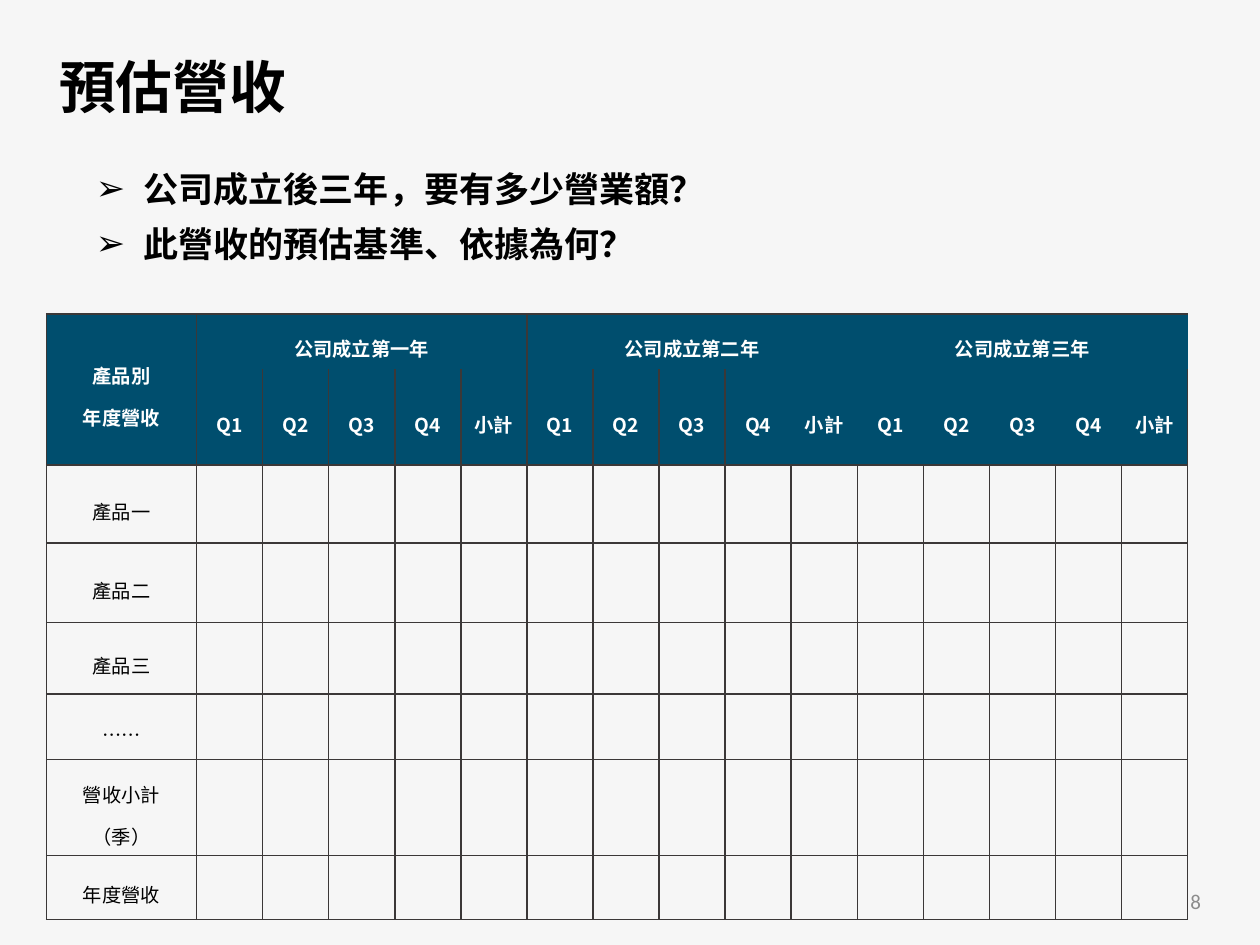
from lxml import etree
from pptx import Presentation
from pptx.dml.color import RGBColor
from pptx.enum.text import MSO_ANCHOR, MSO_AUTO_SIZE, PP_ALIGN
from pptx.oxml.ns import qn
from pptx.util import Inches, Pt

MIDDLE = MSO_ANCHOR.MIDDLE
CENTER, LEFT, RIGHT = PP_ALIGN.CENTER, PP_ALIGN.LEFT, PP_ALIGN.RIGHT
GROW = MSO_AUTO_SIZE.SHAPE_TO_FIT_TEXT
BLACK = RGBColor(0x00, 0x00, 0x00)
WHITE = RGBColor(0xFF, 0xFF, 0xFF)
GRAY = RGBColor(0x8C, 0x8C, 0x8C)
PAPER = RGBColor(0xF6, 0xF6, 0xF6)
TEAL = RGBColor(0x00, 0x4E, 0x6E)
GRID = RGBColor(0x3B, 0x38, 0x38)
CJK = "Noto Sans CJK SC"


def add_text(paragraph, text, size, color, bold, align, spacing, font=CJK):
    paragraph.alignment = align
    paragraph.line_spacing = spacing
    paragraph.space_before = Pt(0)
    run = paragraph.add_run()
    run.text = text
    run.font.size = Pt(size)
    run.font.bold = bold
    run.font.name = font
    run.font.color.rgb = color
    east_asian = etree.SubElement(run.font._element, qn("a:ea"))
    east_asian.set("typeface", font)


def set_borders(cell, visible):
    """Draw the sides marked True in visible (left, right, top, bottom)."""
    properties = cell._tc.get_or_add_tcPr()
    for index, (side, shown) in enumerate(zip("LRTB", visible)):
        line = etree.Element(qn(f"a:ln{side}"), w=str(Pt(1)))
        if shown:
            fill = etree.SubElement(line, qn("a:solidFill"))
            etree.SubElement(fill, qn("a:srgbClr"), val=str(GRID))
        else:
            etree.SubElement(line, qn("a:noFill"))
        properties.insert(index, line)


prs = Presentation()
prs.slide_width, prs.slide_height = Inches(10), Inches(7.5)
slide = prs.slides.add_slide(prs.slide_layouts[1])
slide.background.fill.solid()
slide.background.fill.fore_color.rgb = PAPER

# Title
title = slide.shapes.title
title.left, title.top = Inches(0.37), Inches(0.22)
title.width, title.height = Inches(9.25), Inches(0.81)
title.text_frame.vertical_anchor = MIDDLE
add_text(title.text_frame.paragraphs[0], "預估營收", 32.4, BLACK, True, LEFT, 1.2)

# Page number
page_number = slide.shapes.add_textbox(
    Inches(7.38), Inches(6.95), Inches(2.25), Inches(0.4))
page_number.text_frame.word_wrap = True
page_number.text_frame.vertical_anchor = MIDDLE
add_text(page_number.text_frame.paragraphs[0], "8", 12, GRAY, False, RIGHT, 1.0,
         "Calibri")

# Revenue table
YEARS = ["公司成立第一年", "公司成立第二年", "公司成立第三年"]
PERIODS = ["Q1", "Q2", "Q3", "Q4", "小計"]
PRODUCTS = ["產品一", "產品二", "產品三", "……", "營收小計（季）", "年度營收"]
ROW_HEIGHTS = [0.44, 0.76, 0.62, 0.63, 0.57, 0.52, 0.76, 0.51]
TABLE_WIDTH, LABEL_WIDTH = 9.06, 1.19
column_count = 1 + len(YEARS) * len(PERIODS)

frame = slide.shapes.add_table(
    len(ROW_HEIGHTS), column_count, Inches(0.37), Inches(2.49),
    Inches(TABLE_WIDTH), Inches(sum(ROW_HEIGHTS)))
table = frame.table
table.first_row = table.horz_banding = False
for row, height in zip(table.rows, ROW_HEIGHTS):
    row.height = Inches(height)
for index, column in enumerate(table.columns):
    period_width = (TABLE_WIDTH - LABEL_WIDTH) / (column_count - 1)
    column.width = Inches(period_width if index else LABEL_WIDTH)

labels = {(0, 0): ["產品別", "年度營收"]}
for y, year in enumerate(YEARS):
    first = 1 + y * len(PERIODS)
    labels[0, first] = [year]
    for p, period in enumerate(PERIODS):
        labels[1, first + p] = [period]
for r, product in enumerate(PRODUCTS, start=2):
    labels[r, 0] = [product]

# Column edges that are ruled within the two header rows
header_edges = [{0, 1, 6, column_count}, {*range(10), column_count}]
for r in range(len(ROW_HEIGHTS)):
    for c in range(column_count):
        cell = table.cell(r, c)
        is_header = r < 2
        cell.margin_left = cell.margin_right = Inches(0.07)
        cell.vertical_anchor = MIDDLE
        if is_header:
            cell.fill.solid()
            cell.fill.fore_color.rgb = TEAL
        else:
            cell.fill.background()
        sides = [not is_header or edge in header_edges[r] for edge in (c, c + 1)]
        set_borders(cell, sides + [r != 1, r != 0])
        for n, text in enumerate(labels.get((r, c), [])):
            text_frame = cell.text_frame
            paragraph = text_frame.add_paragraph() if n else text_frame.paragraphs[0]
            add_text(paragraph, text, 11, WHITE if is_header else BLACK, is_header,
                     CENTER, 1.5)

table.cell(0, 0).merge(table.cell(1, 0))
for first in range(1, column_count, len(PERIODS)):
    table.cell(0, first).merge(table.cell(0, first + len(PERIODS) - 1))

# Questions
QUESTIONS = ["公司成立後三年，要有多少營業額？", "此營收的預估基準、依據為何？"]
questions = slide.placeholders[1]
questions.left, questions.top = Inches(0.37), Inches(1.17)
questions.width, questions.height = Inches(5.36), Inches(1.18)
questions.text_frame.word_wrap = False
questions.text_frame.auto_size = GROW
for n, question in enumerate(QUESTIONS):
    text_frame = questions.text_frame
    paragraph = text_frame.add_paragraph() if n else text_frame.paragraphs[0]
    paragraph.level = 1
    properties = paragraph._p.get_or_add_pPr()
    properties.set("marL", str(Inches(0.67)))
    properties.set("indent", str(Inches(-0.38)))
    etree.SubElement(properties, qn("a:buFont"), typeface="Arial")
    etree.SubElement(properties, qn("a:buChar"), char="➢")
    add_text(paragraph, question, 20, BLACK, True, LEFT, 1.32)

prs.save("out.pptx")
